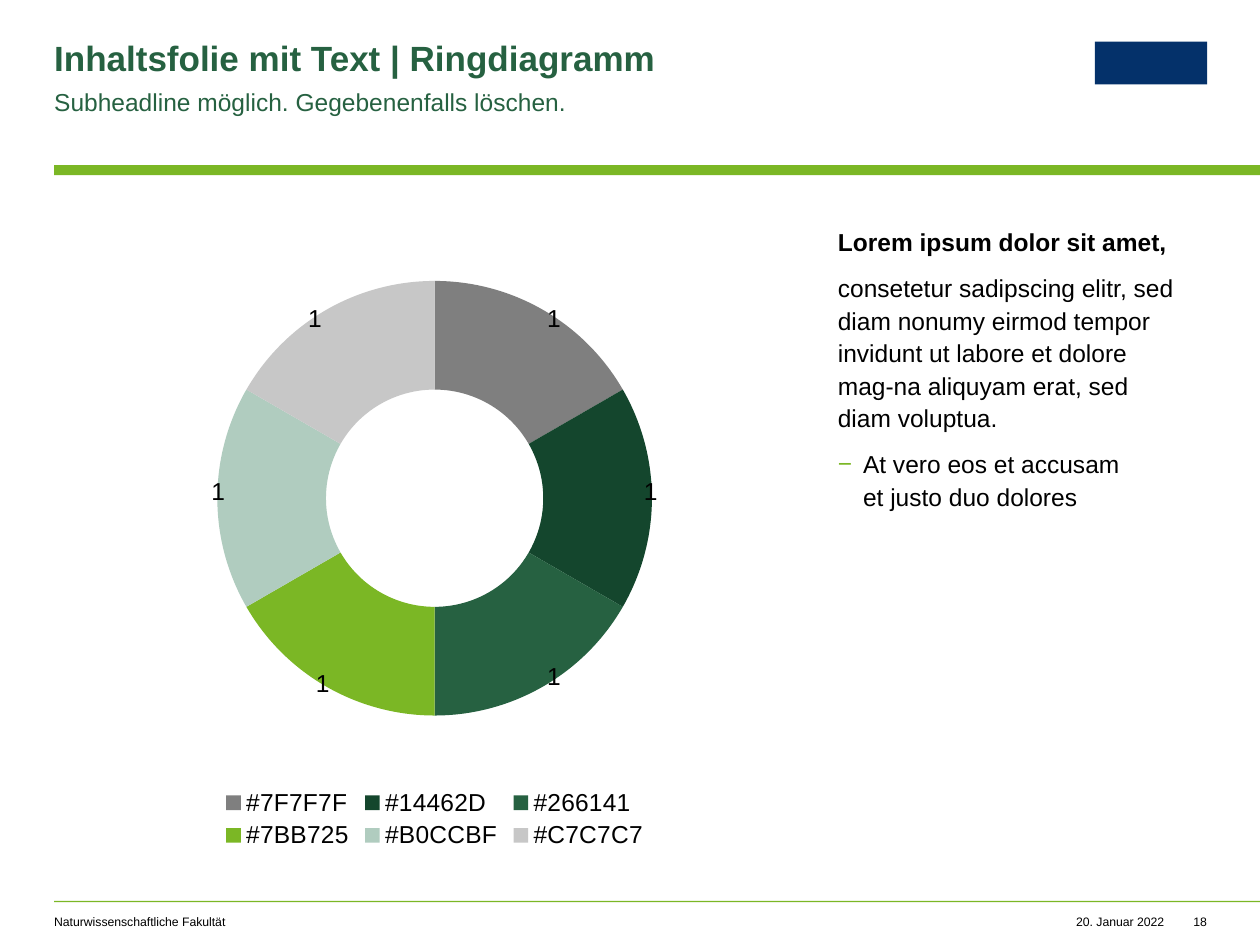
from dataclasses import dataclass

from lxml import etree
from pptx import Presentation
from pptx.chart.data import CategoryChartData
from pptx.dml.color import RGBColor
from pptx.enum.chart import XL_CHART_TYPE, XL_LEGEND_POSITION
from pptx.enum.shapes import MSO_SHAPE
from pptx.enum.text import PP_ALIGN
from pptx.oxml.ns import qn
from pptx.util import Inches, Pt

DOUGHNUT = XL_CHART_TYPE.DOUGHNUT
LEGEND_BOTTOM = XL_LEGEND_POSITION.BOTTOM
RECTANGLE = MSO_SHAPE.RECTANGLE
LEFT, RIGHT = PP_ALIGN.LEFT, PP_ALIGN.RIGHT

# Grid of 100 columns by 75 rows
SLIDE_WIDTH, SLIDE_HEIGHT = Inches(10), Inches(7.5)
COLUMNS, ROWS = 100, 75
MARGIN = 4.3
RIGHT_EDGE = 95.8
CONTENT_TOP, CONTENT_ROWS = 17.8, 50
FOOTER_TOP = 72.6


@dataclass(frozen=True)
class Theme:
    font: str = "Arial"
    title_size: int = 20
    body_size: int = 14
    footer_size: int = 7
    text: str = "000000"
    heading: str = "266141"
    accent: str = "7BB725"
    emblem: str = "04316A"
    slices: tuple = ("7F7F7F", "14462D", "266141", "7BB725", "B0CCBF", "C7C7C7")


THEME = Theme()

# Label shifts from the middle of each slice, as shares of the chart
LABEL_SHIFTS = [(0.05, -0.06), (0.07, -0.01), (0.05, 0.06),
                (-0.04, 0.07), (-0.07, -0.01), (-0.05, -0.06)]
PLOT_AREA = {"x": 0.12, "y": 0.09, "w": 0.76, "h": 0.69}


def cells(left, top, columns, rows):
    """Turn grid columns and rows into slide lengths."""
    column, row = SLIDE_WIDTH / COLUMNS, SLIDE_HEIGHT / ROWS
    return (round(left * column), round(top * row),
            round(columns * column), round(rows * row))


def style_font(font, size, color=THEME.text, bold=False):
    font.name = THEME.font
    font.size = Pt(size)
    font.bold = bold
    font.color.rgb = RGBColor.from_string(color)


def add_block(slide, area, color):
    shape = slide.shapes.add_shape(RECTANGLE, *cells(*area))
    shape.shadow.inherit = False
    shape.fill.solid()
    shape.fill.fore_color.rgb = RGBColor.from_string(color)
    shape.line.fill.background()


def add_text_frame(slide, area, wrap=True, right_inset=0):
    frame = slide.shapes.add_textbox(*cells(*area)).text_frame
    frame.margin_left = frame.margin_top = frame.margin_bottom = 0
    frame.margin_right = Inches(right_inset)
    frame.word_wrap = wrap
    return frame


def write(paragraph, text, size=THEME.body_size, color=THEME.text, bold=False,
          align=LEFT, line_spacing=1.1, space_after=8, bullet=None):
    paragraph.text = text
    paragraph.alignment = align
    paragraph.line_spacing = line_spacing
    paragraph.space_after = Pt(space_after)
    for run in paragraph.runs:
        style_font(run.font, size, color, bold)
    for line_break in paragraph._p.findall(qn("a:br")):
        etree.SubElement(line_break, qn("a:rPr"), sz=str(size * 100))
    if bullet:
        properties = paragraph._p.get_or_add_pPr()
        properties.set("marL", str(Inches(0.2)))
        properties.set("indent", str(-Inches(0.2)))
        bullet_color = etree.SubElement(properties, qn("a:buClr"))
        etree.SubElement(bullet_color, qn("a:srgbClr"), val=THEME.accent)
        etree.SubElement(properties, qn("a:buFont"), typeface=THEME.font)
        etree.SubElement(properties, qn("a:buChar"), char=bullet)


def make_layout(values, inner=False):
    """Build a manual chart layout from shares of the chart."""
    layout = etree.Element(qn("c:layout"))
    manual = etree.SubElement(layout, qn("c:manualLayout"))
    if inner:
        etree.SubElement(manual, qn("c:layoutTarget"), val="inner")
        for mode in ("xMode", "yMode"):
            etree.SubElement(manual, qn(f"c:{mode}"), val="edge")
    for name, value in values.items():
        etree.SubElement(manual, qn(f"c:{name}"), val=str(value))
    return layout


def add_ring_chart(slide, area):
    data = CategoryChartData()
    data.categories = [f"#{color}" for color in THEME.slices]
    data.add_series("Series 1", [1] * len(THEME.slices))
    chart = slide.shapes.add_chart(DOUGHNUT, *cells(*area), data).chart
    style_font(chart.font, 10)
    chart.has_title = False
    chart.has_legend = True
    chart.legend.position = LEGEND_BOTTOM
    chart.legend.include_in_layout = False
    style_font(chart.legend.font, THEME.body_size)

    plot = chart.plots[0]
    plot.vary_by_categories = True
    series = plot.series[0]
    series.data_labels.show_value = True
    style_font(series.data_labels.font, THEME.body_size)

    # Slice colours and shifted labels
    for index, (color, shift) in enumerate(zip(THEME.slices, LABEL_SHIFTS)):
        point = series.points[index]
        point.format.fill.solid()
        point.format.fill.fore_color.rgb = RGBColor.from_string(color)
        point.format.line.fill.background()
        style_font(point.data_label.font, THEME.body_size)
    for label, shift in zip(series._element.iter(qn("c:dLbl")), LABEL_SHIFTS):
        label.insert(1, make_layout(dict(zip("xy", shift))))

    # Hole and plot area
    plot_area = chart._chartSpace.find(f".//{qn('c:plotArea')}")
    plot_area.find(f".//{qn('c:holeSize')}").set("val", "80")
    for layout in plot_area.findall(qn("c:layout")):
        plot_area.remove(layout)
    plot_area.insert(0, make_layout(PLOT_AREA, inner=True))


def add_header(slide):
    add_block(slide, (MARGIN, 13.1, COLUMNS - MARGIN, 0.8), THEME.accent)
    add_block(slide, (86.9, 3.3, 8.9, 3.4), THEME.emblem)
    title = add_text_frame(slide, (MARGIN, 3.3, 56.1, 3))
    write(title.paragraphs[0], "Inhaltsfolie mit Text | Ringdiagramm",
          size=THEME.title_size, color=THEME.heading, bold=True,
          line_spacing=0.9, space_after=0)
    subtitle = add_text_frame(slide, (MARGIN, 6.7, 56.1, 2.4), right_inset=0.39)
    write(subtitle.paragraphs[0], "Subheadline möglich. Gegebenenfalls löschen.",
          color=THEME.heading)


def add_body(slide):
    left = 66.5
    frame = add_text_frame(
        slide, (left, CONTENT_TOP, RIGHT_EDGE - left, CONTENT_ROWS), right_inset=0.2)
    write(frame.paragraphs[0], "Lorem ipsum dolor sit amet,", bold=True)
    write(frame.add_paragraph(),
          "consetetur sadipscing elitr, sed diam nonumy eirmod tempor invidunt "
          "ut labore et dolore mag-na aliquyam erat, sed diam voluptua.")
    write(frame.add_paragraph(), "At vero eos et accusam\net justo duo dolores",
          bullet="−")


def add_footer(slide):
    add_block(slide, (MARGIN, 71.5, COLUMNS - MARGIN, 0.1), THEME.accent)
    items = [("Naturwissenschaftliche Fakultät", MARGIN, 44.9, LEFT),
             ("20. Januar 2022", 85.3, 7.1, RIGHT),
             ("18", 93.8, 2, RIGHT)]
    for text, left, columns, align in items:
        frame = add_text_frame(slide, (left, FOOTER_TOP, columns, 1.2),
                               wrap=align == LEFT)
        write(frame.paragraphs[0], text, size=THEME.footer_size, align=align,
              line_spacing=1.0, space_after=0)


def main():
    presentation = Presentation()
    presentation.slide_width, presentation.slide_height = SLIDE_WIDTH, SLIDE_HEIGHT
    slide = presentation.slides.add_slide(presentation.slide_layouts[6])
    add_header(slide)
    add_body(slide)
    add_ring_chart(slide, (MARGIN, CONTENT_TOP, 60.4, CONTENT_ROWS))
    add_footer(slide)
    presentation.save("out.pptx")


if __name__ == "__main__":
    main()
